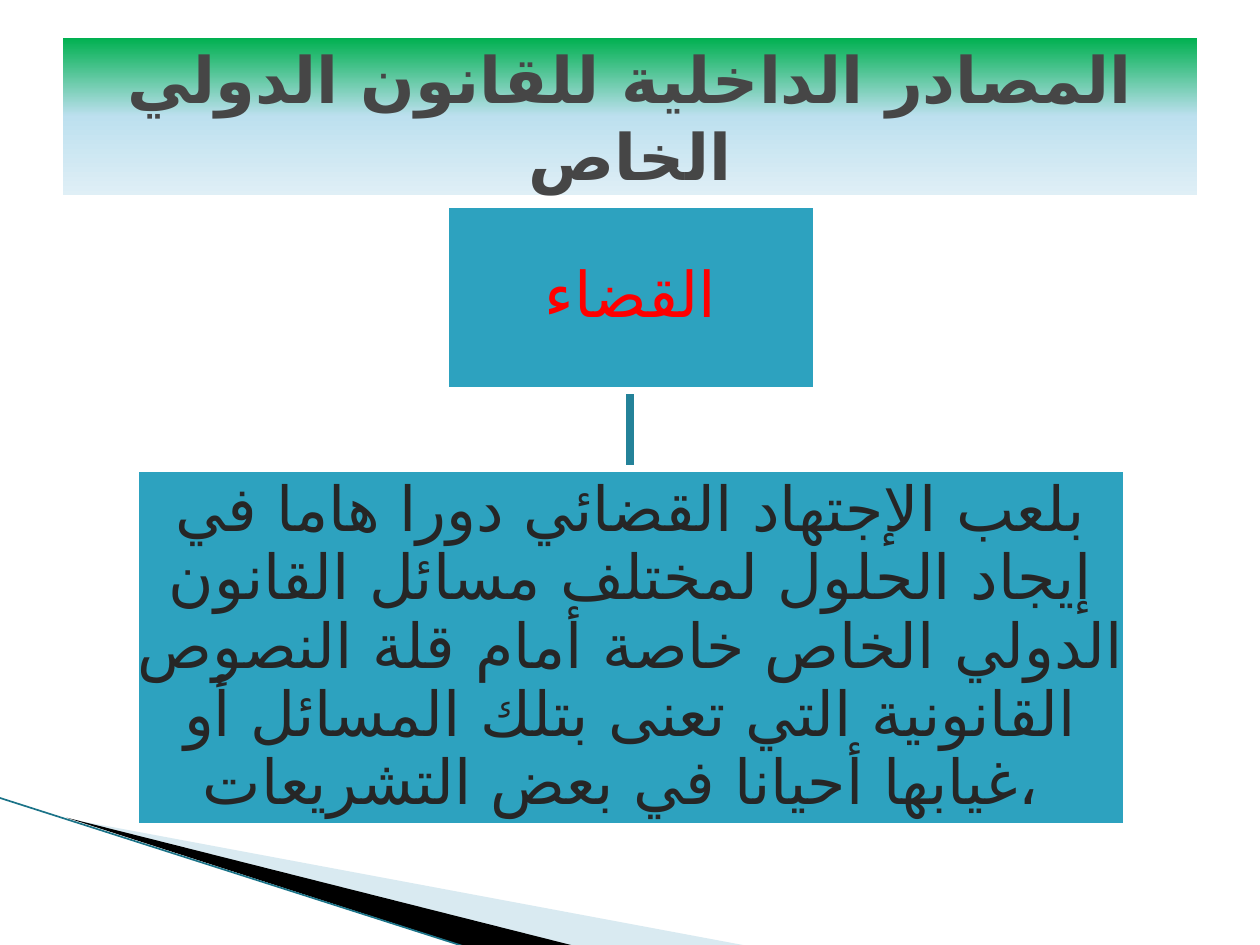
"""Build a slide on case law as an internal source of private international law."""
from copy import deepcopy

from lxml import etree
from pptx import Presentation
from pptx.dml.color import RGBColor
from pptx.enum.shapes import MSO_CONNECTOR, MSO_SHAPE
from pptx.enum.text import MSO_ANCHOR, PP_ALIGN
from pptx.oxml.ns import qn
from pptx.util import Inches, Pt

RECTANGLE = MSO_SHAPE.RECTANGLE
STRAIGHT = MSO_CONNECTOR.STRAIGHT
MIDDLE = MSO_ANCHOR.MIDDLE
CENTER = PP_ALIGN.CENTER
FONT = "DejaVu Sans"


def color(hex_string):
    return RGBColor.from_string(hex_string)


def write(shape, text, size=36, ink="262626", bold=False, spacing=0.9, inset=0.03):
    frame = shape.text_frame
    frame.word_wrap = True
    frame.vertical_anchor = MIDDLE
    frame.margin_left = frame.margin_right = Inches(inset)
    frame.margin_top = frame.margin_bottom = Inches(0.03)
    paragraph = frame.paragraphs[0]
    paragraph.alignment = CENTER
    paragraph.line_spacing = spacing
    run = paragraph.add_run()
    run.text = text
    run.font.size = Pt(size)
    run.font.bold = bold
    run.font.name = FONT
    run.font.color.rgb = color(ink)
    etree.SubElement(run.font._element, qn("a:cs"), typeface=FONT)


prs = Presentation()
prs.slide_width, prs.slide_height = Inches(10), Inches(7.5)
slide = prs.slides.add_slide(prs.slide_layouts[6])
shapes = slide.shapes

swooshes = [
    ("A0CBDC", 40, [(0.55, 6.5), (5.95, 7.51), (4.56, 7.51)]),
    ("000000", 100, [(0.53, 6.49), (4.57, 7.51), (3.72, 7.52)]),
]
for fill, opacity, corners in swooshes:
    points = [(Inches(x), Inches(y)) for x, y in corners]
    builder = shapes.build_freeform(*points[0])
    builder.add_line_segments(points[1:], close=True)
    swoosh = builder.convert_to_shape()
    swoosh.shadow.inherit = False
    swoosh.fill.solid()
    swoosh.fill.fore_color.rgb = color(fill)
    swoosh.line.fill.background()
    if opacity < 100:
        tint = swoosh._element.spPr.find(".//" + qn("a:srgbClr"))
        etree.SubElement(tint, qn("a:alpha"), val=str(opacity * 1000))

lines = [
    ((-0.01, 6.33), (3.71, 7.52), "1B7388", 0.95),
    ((5, 3.1), (5, 3.72), "248299", 4.33),
]
for start, end, ink, width in lines:
    line = shapes.add_connector(STRAIGHT, *map(Inches, start + end))
    line.line.color.rgb = color(ink)
    line.line.width = Pt(width)
    etree.SubElement(line._element.spPr, qn("a:effectLst"))

boxes = [
    ((3.53, 1.62, 2.95, 1.48), "القضاء", {"ink": "FF0000"}),
    ((1.07, 3.72, 7.87, 2.84),
     "بلعب الإجتهاد القضائي دورا هاما في إيجاد الحلول لمختلف مسائل القانون "
     "الدولي الخاص خاصة أمام قلة النصوص القانونية التي تعنى بتلك المسائل أو "
     "غيابها أحيانا في بعض التشريعات، ",
     {"size": 35.4, "spacing": 0.92, "inset": 0}),
]
for bounds, text, style in boxes:
    box = shapes.add_shape(RECTANGLE, *map(Inches, bounds))
    box.shadow.inherit = False
    box.fill.solid()
    box.fill.fore_color.rgb = color("2DA2BF")
    box.line.color.rgb = color("FFFFFF")
    box.line.width = Pt(4.33)
    write(box, text, **style)

title = shapes.add_shape(RECTANGLE, Inches(0.5), Inches(0.3), Inches(9), Inches(1.25))
title.shadow.inherit = False
title.line.fill.background()
title.fill.gradient()
title.fill.gradient_angle = 270
stop_list = title._element.spPr.find(".//" + qn("a:gsLst"))
stop_list.append(deepcopy(stop_list[0]))
title_stops = [(0, "00B050"), (0.5, "BDE0EF"), (1, "DFEFF6")]
for stop, (position, tone) in zip(title.fill.gradient_stops, title_stops):
    stop.position = position
    stop.color.rgb = color(tone)
write(title, "المصادر الداخلية للقانون الدولي الخاص", size=36.6, ink="464646",
      bold=True, spacing=1.0, inset=0.1)

prs.save("out.pptx")
